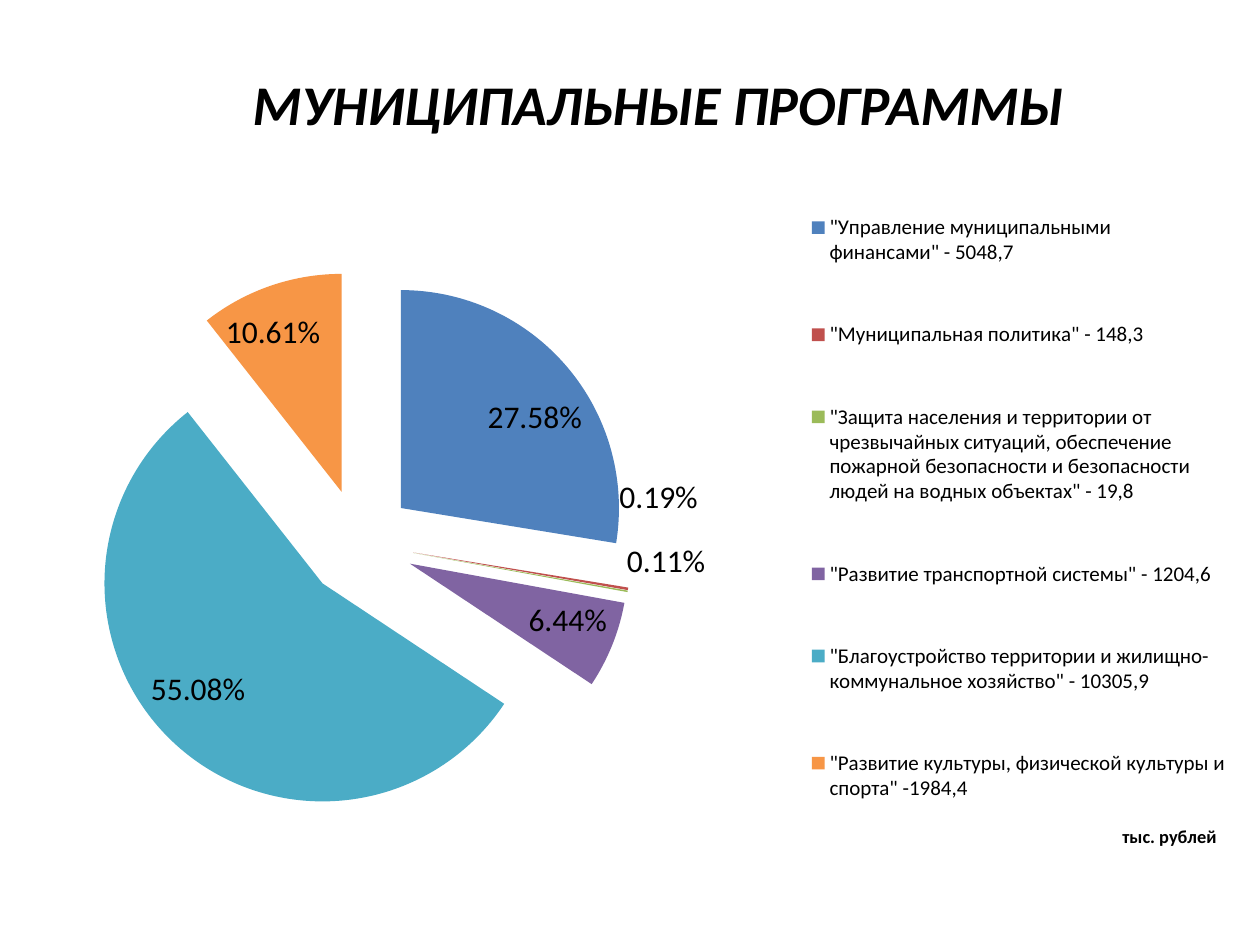
from dataclasses import dataclass

from lxml import etree
from pptx import Presentation, util as u
from pptx.chart.data import CategoryChartData
from pptx.dml.color import RGBColor
from pptx.enum import chart as ch, text
from pptx.oxml import parse_xml
from pptx.oxml.ns import nsdecls, qn

PX = 914400 / 126


@dataclass(frozen=True)
class Theme:
    font: str = "Calibri"
    ink: str = "000000"
    title: float = 32
    label: float = 18
    legend: float = 12
    unit: float = 10.5
    slices: tuple = ("4F81BD", "C0504D", "9BBB59", "8064A2", "4BACC6", "F79646")


T = Theme()

PROGRAMS = [
    ('"Управление муниципальными финансами" - 5048,7', 27.58),
    ('"Муниципальная политика" - 148,3', 0.19),
    ('"Защита населения и территории от чрезвычайных ситуаций, обеспечение '
     'пожарной безопасности и безопасности людей на водных объектах" - 19,8', 0.11),
    ('"Развитие транспортной системы" - 1204,6', 6.44),
    ('"Благоустройство территории и жилищно-коммунальное хозяйство" - 10305,9', 55.08),
    ('"Развитие культуры, физической культуры и спорта" -1984,4', 10.61),
]
# Shifts of the labels of the thin slices, in px
LABEL_SHIFTS = {1: (-16, -112), 2: (-8, -50)}


def px(n):
    return u.Emu(round(n * PX))


def style(font, size, bold=False, italic=False):
    font.name, font.size = T.font, u.Pt(size)
    font.bold, font.italic = bold, italic
    font.color.rgb = RGBColor.from_string(T.ink)


def layout_xml(size, x, y, w=None, h=None, inner=False, edge=True):
    """Manual layout from px inside a chart of the given size."""
    parts = ['<c:layoutTarget val="inner"/>'] if inner else []
    if edge:
        parts += ['<c:xMode val="edge"/>', '<c:yMode val="edge"/>']
    for tag, n, full in zip("xywh", (x, y, w, h), size * 2):
        if n is not None:
            parts.append(f'<c:{tag} val="{n / full:.4f}"/>')
    return parse_xml(f'<c:layout {nsdecls("c")}><c:manualLayout>'
                     f'{"".join(parts)}</c:manualLayout></c:layout>')


def set_layout(parent, after, layout):
    for old in parent.findall(qn("c:layout")):
        parent.remove(old)
    if after is None:
        parent.insert(0, layout)
    else:
        parent.find(qn(after)).addnext(layout)


def add_title(s, x, y, w, h):
    sp = s.shapes.title
    sp.left, sp.top, sp.width, sp.height = map(px, (x, y, w, h))
    tf = sp.text_frame
    tf.word_wrap = True
    tf.vertical_anchor = text.MSO_ANCHOR.MIDDLE
    tf.margin_bottom = px(56)
    p = tf.paragraphs[0]
    p.alignment = text.PP_ALIGN.CENTER
    r = p.add_run()
    r.text = "МУНИЦИПАЛЬНЫЕ ПРОГРАММЫ"
    style(r.font, T.title, bold=True, italic=True)


def add_labels(plot, series, size):
    plot.has_data_labels = True
    labels = plot.data_labels
    # The values are shares already, so they are shown as they stand
    labels.show_percentage, labels.show_value = False, True
    labels.number_format, labels.number_format_is_linked = '0.00"%"', False
    labels.position = ch.XL_LABEL_POSITION.BEST_FIT
    style(labels.font, T.label)
    # The series carries the same labels, plus the shifted ones
    own = parse_xml(etree.tostring(labels._element))
    series._element.find(qn("c:cat")).addprevious(own)
    for at, (i, shift) in enumerate(LABEL_SHIFTS.items()):
        lbl = parse_xml(f'<c:dLbl {nsdecls("c")}><c:idx val="{i}"/></c:dLbl>')
        lbl.append(layout_xml(size, *shift, edge=False))
        for part in labels._element:
            if part.tag != qn("c:showLeaderLines"):
                lbl.append(parse_xml(etree.tostring(part)))
        own.insert(at, lbl)


def add_pie(s, x, y, w, h):
    size = (w, h)
    data = CategoryChartData(number_format="0.00")
    data.categories = [name for name, _ in PROGRAMS]
    data.add_series("Series 1", [share for _, share in PROGRAMS])
    chart = s.shapes.add_chart(ch.XL_CHART_TYPE.PIE, *map(px, (x, y, w, h)), data).chart
    style(chart.font, T.label)

    # Slices
    plot = chart.plots[0]
    plot.vary_by_categories = True
    series = plot.series[0]
    for i, color in enumerate(T.slices):
        fill = series.points[i].format.fill
        fill.solid()
        fill.fore_color.rgb = RGBColor.from_string(color)
    series._element.find(qn("c:dPt")).addprevious(
        parse_xml(f'<c:explosion {nsdecls("c")} val="25"/>'))
    add_labels(plot, series, size)
    set_layout(chart._chartSpace.chart.plotArea, None,
               layout_xml(size, 0, 113, 699, 545, inner=True))

    # Unit note, kept in the chart title
    chart.has_title = True
    title = chart.chart_title
    r = title.text_frame.paragraphs[0].add_run()
    r.text = "тыс. рублей"
    style(r.font, T.unit, bold=True)
    title.include_in_layout = False
    set_layout(title._element, "c:tx", layout_xml(size, 1109, 663))

    # Legend
    chart.has_legend = True
    legend = chart.legend
    legend.position = ch.XL_LEGEND_POSITION.RIGHT
    legend.include_in_layout = False
    style(legend.font, T.legend)
    set_layout(legend._element, "c:legendPos",
               layout_xml(size, w - 414, 0, 414, h))


def main():
    prs = Presentation()
    prs.slide_width, prs.slide_height = u.Inches(10), u.Inches(7.5)
    s = prs.slides.add_slide(prs.slide_layouts[5])
    add_title(s, 84, 55, 1149, 145)
    add_pie(s, 10, 158, 1231, 700)
    prs.save("out.pptx")


if __name__ == "__main__":
    main()
